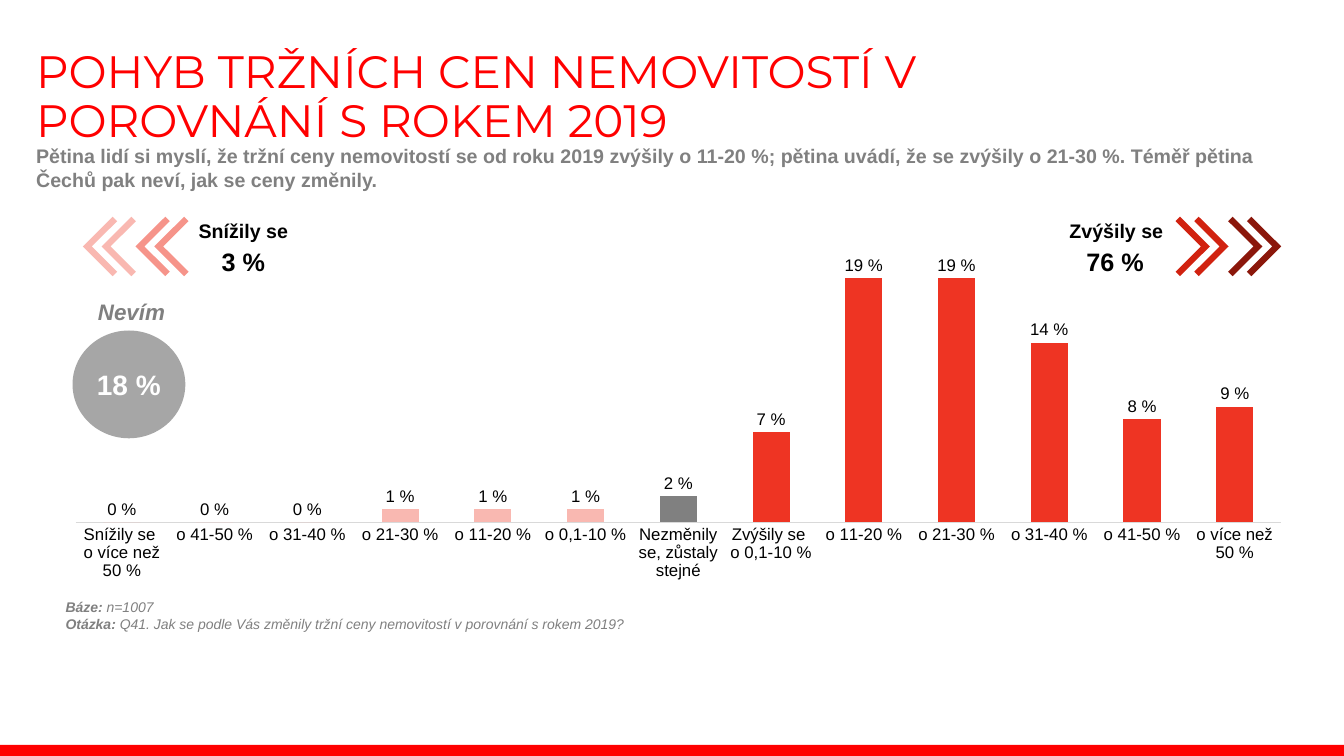
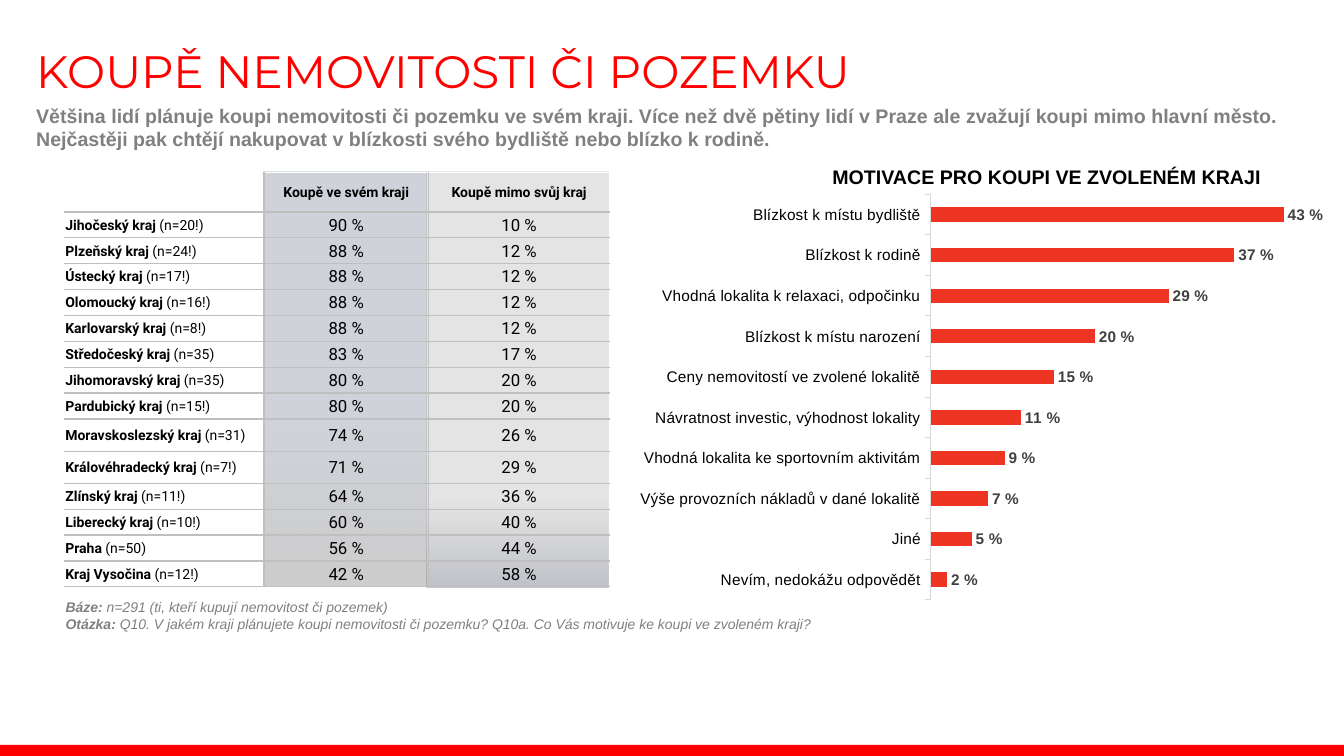
import pptx
import pptx.chart.data
import pptx.dml.color
import pptx.enum.chart
import pptx.enum.shapes
import pptx.enum.text
import pptx.oxml
import pptx.oxml.ns
import pptx.util

Pt = pptx.util.Pt
ALIGN = pptx.enum.text.PP_ALIGN
ANCHOR = pptx.enum.text.MSO_ANCHOR
SHAPE = pptx.enum.shapes.MSO_SHAPE
CHART_TYPE = pptx.enum.chart.XL_CHART_TYPE
TICK = pptx.enum.chart.XL_TICK_MARK

# Shared look
WIDTH, HEIGHT = 960, 540
BRAND, BAR, BLACK, WHITE = "FF0000", "EE3423", "000000", "FFFFFF"
GREY, RULE, AXIS = "808080", "BFBFBF", "D9D9D9"
PINK, SALMON, CRIMSON, MAROON = "F9B8B1", "F6948A", "D12210", "8B170B"
INSETS = (7.2, 3.6, 7.2, 3.6)
NAMESPACE = pptx.oxml.ns.nsdecls("a")


def rgb(value):
    return pptx.dml.color.RGBColor.from_string(value)


def points(box):
    return [Pt(value) for value in box]


def style_font(font, size, color=BLACK, bold=False, italic=False, name="Arial"):
    font.size, font.name, font.bold, font.italic = Pt(size), name, bold, italic
    font.color.rgb = rgb(color)


def add_run(paragraph, text, size, **style):
    run = paragraph.add_run()
    run.text = text
    style_font(run.font, size, **style)


def add_text(slide, box, text, size, align=ALIGN.LEFT, anchor=ANCHOR.TOP, spacing=None, **style):
    frame = slide.shapes.add_textbox(*points(box)).text_frame
    frame.word_wrap, frame.vertical_anchor = True, anchor
    paragraph = frame.paragraphs[0]
    paragraph.alignment, paragraph.line_spacing = align, spacing
    add_run(paragraph, text, size, **style)


def clean_shape(shape, color=None):
    shape.shadow.inherit = False
    shape.line.fill.background()
    if color:
        shape.fill.solid()
        shape.fill.fore_color.rgb = rgb(color)
    return shape


def add_shape(slide, kind, box, color=None):
    return clean_shape(slide.shapes.add_shape(kind, *points(box)), color)


def add_base(presentation, title, title_width, subtitle, subtitle_top, notes):
    """Blank slide with title, subtitle, source notes and bottom band."""
    slide = presentation.slides.add_slide(presentation.slide_layouts[6])
    add_shape(slide, SHAPE.RECTANGLE, (0, 532, WIDTH, 8), BRAND)
    add_text(slide, (18.7, 31.7, title_width, 38), title, 32.4,
             spacing=0.9, color=BRAND, name="Montserrat")
    add_text(slide, (18.7, subtitle_top, 913.7, 50.4), subtitle, 14, color=GREY, bold=True)
    frame = slide.shapes.add_textbox(*points((46.8, 427.7, 833.8, 24.5))).text_frame
    frame.word_wrap = True
    frame.margin_left = frame.margin_top = frame.margin_right = frame.margin_bottom = 0
    for index, (label, note) in enumerate(notes):
        paragraph = frame.add_paragraph() if index else frame.paragraphs[0]
        add_run(paragraph, label, 10, color=GREY, bold=True, italic=True)
        add_run(paragraph, note, 10, color=GREY, italic=True)
    return slide


def set_plot_layout(chart, plot_box):
    """Fix the inner plot area as fractions of the chart."""
    plot_area = chart._chartSpace.chart.plotArea
    for layout in plot_area.findall(pptx.oxml.ns.qn("c:layout")):
        plot_area.remove(layout)
    sizes = "".join(f'<c:{key} val="{value}"/>' for key, value in zip("xywh", plot_box))
    plot_area.insert(0, pptx.oxml.parse_xml(
        f'<c:layout {pptx.oxml.ns.nsdecls("c")}><c:manualLayout><c:layoutTarget val="inner"/>'
        f'<c:xMode val="edge"/><c:yMode val="edge"/>{sizes}</c:manualLayout></c:layout>'))


def add_bar_chart(slide, box, kind, items, plot_box, maximum, gap, size, tick,
                  label_color=BLACK, label_bold=False, point_colors=()):
    data = pptx.chart.data.CategoryChartData()
    data.categories = [name for name, value in items]
    data.add_series("Series 1", [value for name, value in items])
    chart = slide.shapes.add_chart(kind, *points(box), data).chart
    chart.has_legend = chart.has_title = False
    style_font(chart.font, 10)
    set_plot_layout(chart, plot_box)

    # Axes
    category_axis, value_axis = chart.category_axis, chart.value_axis
    category_axis.major_tick_mark, category_axis.minor_tick_mark = tick, TICK.NONE
    category_axis.has_major_gridlines = value_axis.has_major_gridlines = False
    style_font(category_axis.tick_labels.font, size)
    category_axis.format.line.color.rgb = rgb(AXIS)
    category_axis.format.line.width = Pt(0.75)
    value_axis.minimum_scale, value_axis.maximum_scale = 0, maximum
    value_axis.visible = False

    # Bars and labels
    plot = chart.plots[0]
    plot.gap_width, plot.vary_by_categories = gap, False
    series = plot.series[0]
    series.format.fill.solid()
    series.format.fill.fore_color.rgb = rgb(BAR)
    for index, color in enumerate(point_colors):
        fill = series.points[index].format.fill
        fill.solid()
        fill.fore_color.rgb = rgb(color)
    plot.has_data_labels = True
    labels = plot.data_labels
    labels.show_value = True
    labels.number_format, labels.number_format_is_linked = '0" %"', False
    labels.position = pptx.enum.chart.XL_LABEL_POSITION.OUTSIDE_END
    style_font(labels.font, size, color=label_color, bold=label_bold)


def add_chevron(slide, box, color, direction):
    """Thin arrowhead pointing right (direction 1) or left (-1)."""
    left, top, width, height = box
    start = left if direction == 1 else left + width
    stroke = 3.2
    outline = [(0, stroke), (stroke, 0), (width, height / 2), (stroke, height),
               (0, height - stroke), (width - 2 * stroke, height / 2)]
    corners = [(Pt(start + direction * x), Pt(top + y)) for x, y in outline]
    builder = slide.shapes.build_freeform(*corners[0], scale=1.0)
    builder.add_line_segments(corners[1:], close=True)
    clean_shape(builder.convert_to_shape(), color)


def add_trend(slide, left, colors, direction, label, label_left, value, value_left):
    """Two pairs of chevrons with a label and a share."""
    top = 154.8
    for pair, color in enumerate(colors):
        for offset in (0, 13.4):
            add_chevron(slide, (left + 37.6 * pair + offset, top, 24.5, 42.5), color, direction)
    add_text(slide, (label_left, top - 3.6, 205.2, 27.4), label, 14,
             align=ALIGN.CENTER, anchor=ANCHOR.MIDDLE, bold=True)
    add_text(slide, (value_left, top + 17.3, 61, 28.8), value, 18, bold=True)


def add_undecided(slide, left, top):
    add_text(slide, (left - 49.7, top, 183.6, 26.6), "Nevím", 16,
             align=ALIGN.CENTER, color=GREY, bold=True, italic=True)
    circle = add_shape(slide, SHAPE.OVAL, (left, top + 26.6, 80.6, 77), "A6A6A6")
    frame = circle.text_frame
    frame.word_wrap, frame.vertical_anchor = False, ANCHOR.MIDDLE
    frame.paragraphs[0].alignment = ALIGN.CENTER
    add_run(frame.paragraphs[0], "18 %", 20, color=WHITE, bold=True)


def add_gradient_column(slide, box, stops):
    shape = add_shape(slide, SHAPE.RECTANGLE, box)
    shape.fill.gradient()
    shape.fill.gradient_angle = 270
    for stop, (position, color, opacity) in zip(shape.fill.gradient_stops, stops):
        stop.position, stop.color.rgb = position, rgb(color)
    colors = shape._element.iter(pptx.oxml.ns.qn("a:srgbClr"))
    for element, (position, color, opacity) in zip(colors, stops):
        element.append(pptx.oxml.parse_xml(f'<a:alpha {NAMESPACE} val="{opacity * 1000}"/>'))


def set_borders(cell, colors):
    properties = cell._tc.get_or_add_tcPr()
    for index, (side, color) in enumerate(zip("LRTB", colors)):
        properties.insert(index, pptx.oxml.parse_xml(
            f'<a:ln{side} {NAMESPACE} w="12700"><a:solidFill><a:srgbClr val="{color}"/>'
            f'</a:solidFill></a:ln{side}>'))


def add_region_table(slide, left, top, headers, regions):
    widths = (142.6, 117.4, 129.6)
    heights = [28.4] + [23 if own in (74, 71) else 18.5 for name, base, own in regions]

    # Shading behind the two value columns
    add_gradient_column(slide, (left + widths[0] - 0.7, top - 0.7, widths[1] - 0.7, 296.6),
                        ((0.6, "44546A", 25), (1, "767171", 35)))
    add_gradient_column(slide, (left + sum(widths[:2]) - 1.5, top - 0.7, widths[2] + 0.7, 297.4),
                        ((0.78, "767171", 18), (1, "333F50", 32)))

    # Grid
    table = slide.shapes.add_table(len(heights), 3, *points(
        (left, top, sum(widths), sum(heights)))).table
    table.first_row = table.horz_banding = False
    for column, width in zip(table.columns, widths):
        column.width = Pt(width)
    rows = [[[]] + [[(header, 10, True)] for header in headers]]
    for name, base, own in regions:
        rows.append([[(f"{name} ", 10, True), (f"(n={base})", 10, False)],
                     [(f"{own} %", 12, False)], [(f"{100 - own} %", 12, False)]])
    for row, runs_by_column in enumerate(rows):
        table.rows[row].height = Pt(heights[row])
        for column, runs in enumerate(runs_by_column):
            cell = table.cell(row, column)
            cell.fill.background()
            cell.vertical_anchor = ANCHOR.MIDDLE
            cell.margin_left = cell.margin_right = cell.margin_top = Pt(0.7)
            cell.margin_bottom = 0
            paragraph = cell.text_frame.paragraphs[0]
            paragraph.alignment = ALIGN.CENTER if column else ALIGN.LEFT
            for text, size, bold in runs:
                add_run(paragraph, text, size, bold=bold, name="Roboto")
            set_borders(cell, (RULE if column else WHITE, WHITE if column == 2 else RULE,
                               RULE if row else WHITE, RULE))


def build_price_slide(presentation):
    slide = add_base(
        presentation, "POHYB TRŽNÍCH CEN NEMOVITOSTÍ V POROVNÁNÍ S ROKEM 2019", 683.3,
        "Pětina lidí si myslí, že tržní ceny nemovitostí se od roku 2019 zvýšily o 11-20 %; "
        "pětina uvádí, že se zvýšily o 21-30 %. Téměř pětina Čechů pak neví, jak se ceny změnily.",
        99.4,
        [("Báze: ", "n=1007"),
         ("Otázka: ", "Q41. Jak se podle Vás změnily tržní ceny nemovitostí "
                      "v porovnání s rokem 2019?")])
    changes = [("Snížily se \no více než 50 %", 0), ("o 41-50 %", 0), ("o 31-40 %", 0),
               ("o 21-30 %", 1), ("o 11-20 %", 1), ("o 0,1-10 %", 1),
               ("Nezměnily se, zůstaly stejné", 2), ("Zvýšily se \no 0,1-10 %", 7),
               ("o 11-20 %", 19), ("o 21-30 %", 19), ("o 31-40 %", 14), ("o 41-50 %", 8),
               ("o více než 50 %", 9)]
    add_bar_chart(slide, (36, 141.1, 897.1, 279.4), CHART_TYPE.COLUMN_CLUSTERED, changes,
                  (0.02, 0.01, 0.96, 0.82), 25, 150, 12, TICK.NONE,
                  point_colors=[PINK] * 6 + [GREY] + [BAR] * 6)
    add_trend(slide, 59.2, (PINK, SALMON), -1, "Snížily se", 71.3, "3 %", 151.2)
    add_trend(slide, 839.7, (CRIMSON, MAROON), 1, "Zvýšily se", 694.8, "76 %", 769)
    add_undecided(slide, 51.8, 209.5)


def build_purchase_slide(presentation):
    slide = add_base(
        presentation, "KOUPĚ NEMOVITOSTI ČI POZEMKU", 913.7,
        "Většina lidí plánuje koupi nemovitosti či pozemku ve svém kraji. Více než dvě pětiny "
        "lidí v Praze ale zvažují koupi mimo hlavní město. Nejčastěji pak chtějí nakupovat "
        "v blízkosti svého bydliště nebo blízko k rodině.",
        70.6,
        [("Báze: ", "n=291 (ti, kteří kupují nemovitost či pozemek)"),
         ("Otázka: ", "Q10. V jakém kraji plánujete koupi nemovitosti či pozemku? "
                      "Q10a. Co Vás motivuje ke koupi ve zvoleném kraji?")])
    regions = [("Jihočeský kraj", "20!", 90), ("Plzeňský kraj", "24!", 88),
               ("Ústecký kraj", "17!", 88), ("Olomoucký kraj", "16!", 88),
               ("Karlovarský kraj", "8!", 88), ("Středočeský kraj", "35", 83),
               ("Jihomoravský kraj", "35", 80), ("Pardubický kraj", "15!", 80),
               ("Moravskoslezský kraj", "31", 74), ("Královéhradecký kraj", "7!", 71),
               ("Zlínský kraj", "11!", 64), ("Liberecký kraj", "10!", 60),
               ("Praha", "50", 56), ("Kraj Vysočina", "12!", 42)]
    add_region_table(slide, 46, 123, ("Koupě ve svém kraji", "Koupě mimo svůj kraj"), regions)
    motives = [("Nevím, nedokážu odpovědět", 2), ("Jiné", 5),
               ("Výše provozních nákladů v dané lokalitě", 7),
               ("Vhodná lokalita ke sportovním aktivitám", 9),
               ("Návratnost investic, výhodnost lokality", 11),
               ("Ceny nemovitostí ve zvolené lokalitě", 15), ("Blízkost k místu narození", 20),
               ("Vhodná lokalita k relaxaci, odpočinku", 29), ("Blízkost k rodině", 37),
               ("Blízkost k místu bydliště", 43)]
    add_bar_chart(slide, (416.9, 129.6, 528.5, 308.2), CHART_TYPE.BAR_CLUSTERED, motives,
                  (0.47, 0.03, 0.5, 0.94), 45, 182, 11, TICK.OUTSIDE,
                  label_color="404040", label_bold=True)
    add_text(slide, (577.4, 113, 340.6, 26.6), "MOTIVACE PRO KOUPI VE ZVOLENÉM KRAJI", 14,
             align=ALIGN.CENTER, anchor=ANCHOR.MIDDLE, bold=True)


def main():
    presentation = pptx.Presentation()
    presentation.slide_width, presentation.slide_height = Pt(WIDTH), Pt(HEIGHT)
    build_price_slide(presentation)
    build_purchase_slide(presentation)
    presentation.save("out.pptx")


if __name__ == "__main__":
    main()
